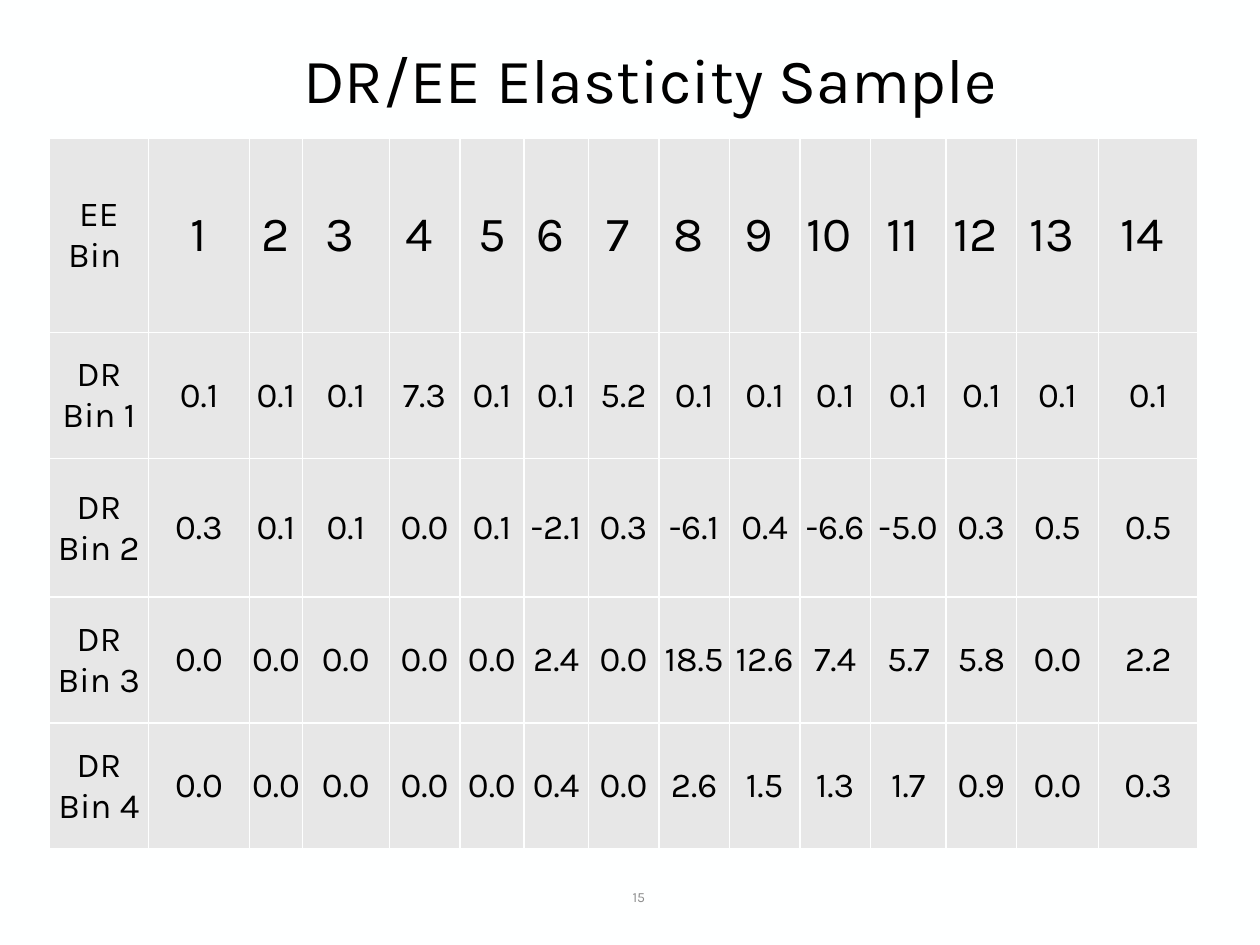
from lxml import etree
from pptx import Presentation
from pptx.dml.color import RGBColor
from pptx.enum.text import MSO_ANCHOR, PP_ALIGN
from pptx.oxml.ns import qn
from pptx.util import Inches, Pt

CENTER = PP_ALIGN.CENTER
MIDDLE = MSO_ANCHOR.MIDDLE
FONT = "Karla"
COLORS = {"background": "FEFFFF", "cell": "E7E7E7", "text": "000000", "number": "8C8C8C"}

COLUMN_WIDTHS = [0.79, 0.8, 0.42, 0.69, 0.56, 0.51, 0.51, 0.56,
                 0.56, 0.56, 0.56, 0.6, 0.56, 0.65, 0.79]
ROW_HEIGHTS = [1.54, 1, 1.1, 1, 1]
HEADER = ["EE Bin ", "1", "2", "3 ", "4 ", "5", "6 ", "7 ",
          "8 ", "9 ", "10 ", "11 ", "12 ", "13 ", "14 "]
ELASTICITIES = [
    [0.1, 0.1, 0.1, 7.3, 0.1, 0.1, 5.2, 0.1, 0.1, 0.1, 0.1, 0.1, 0.1, 0.1],
    [0.3, 0.1, 0.1, 0.0, 0.1, -2.1, 0.3, -6.1, 0.4, -6.6, -5.0, 0.3, 0.5, 0.5],
    [0.0, 0.0, 0.0, 0.0, 0.0, 2.4, 0.0, 18.5, 12.6, 7.4, 5.7, 5.8, 0.0, 2.2],
    [0.0, 0.0, 0.0, 0.0, 0.0, 0.4, 0.0, 2.6, 1.5, 1.3, 1.7, 0.9, 0.0, 0.3],
]


def rgb(name):
    return RGBColor.from_string(COLORS[name])


def write_centered(text_frame, text, size, color="text"):
    paragraph = text_frame.paragraphs[0]
    paragraph.text = text
    paragraph.alignment = CENTER
    paragraph.font.name = FONT
    paragraph.font.size = Pt(size)
    paragraph.font.color.rgb = rgb(color)
    return paragraph


def add_label(slide, box, text, size, color="text"):
    text_frame = slide.shapes.add_textbox(*map(Inches, box)).text_frame
    text_frame.word_wrap = True
    text_frame.vertical_anchor = MIDDLE
    return write_centered(text_frame, text, size, color)


def set_borders(cell):
    properties = cell._tc.get_or_add_tcPr()
    for position, side in enumerate(("a:lnL", "a:lnR", "a:lnT", "a:lnB")):
        line = etree.Element(qn(side), w=str(Pt(1)))
        fill = etree.SubElement(line, qn("a:solidFill"))
        etree.SubElement(fill, qn("a:srgbClr"), val=COLORS["background"])
        properties.insert(position, line)


def style_cell(cell, text, size):
    cell.margin_left = cell.margin_right = cell.margin_top = cell.margin_bottom = 0
    cell.vertical_anchor = MIDDLE
    cell.fill.solid()
    cell.fill.fore_color.rgb = rgb("cell")
    set_borders(cell)
    write_centered(cell.text_frame, text, size)


def add_elasticity_table(slide, left, top):
    rows = [HEADER] + [
        [f"DR Bin {number}"] + [f"{value:.1f}" for value in values]
        for number, values in enumerate(ELASTICITIES, 1)
    ]
    table = slide.shapes.add_table(
        len(rows), len(HEADER), Inches(left), Inches(top),
        Inches(sum(COLUMN_WIDTHS)), Inches(sum(ROW_HEIGHTS))).table
    for column, width in zip(table.columns, COLUMN_WIDTHS):
        column.width = Inches(width)
    for row, height in zip(table.rows, ROW_HEIGHTS):
        row.height = Inches(height)
    for row_index, texts in enumerate(rows):
        for column_index, text in enumerate(texts):
            size = 28 if row_index == 0 and column_index > 0 else 20
            style_cell(table.cell(row_index, column_index), text, size)


def main():
    presentation = Presentation()
    presentation.slide_width = Inches(10)
    presentation.slide_height = Inches(7.5)
    slide = presentation.slides.add_slide(presentation.slide_layouts[6])
    slide.background.fill.solid()
    slide.background.fill.fore_color.rgb = rgb("background")
    title = add_label(slide, (0.69, 0.4, 8.94, 0.52), "DR/EE Elasticity Sample", 36)
    title.line_spacing = 0.9
    add_elasticity_table(slide, 0.39, 1.1)
    add_label(slide, (4.78, 6.92, 0.58, 0.4), "15", 8, "number")
    presentation.save("out.pptx")


if __name__ == "__main__":
    main()
